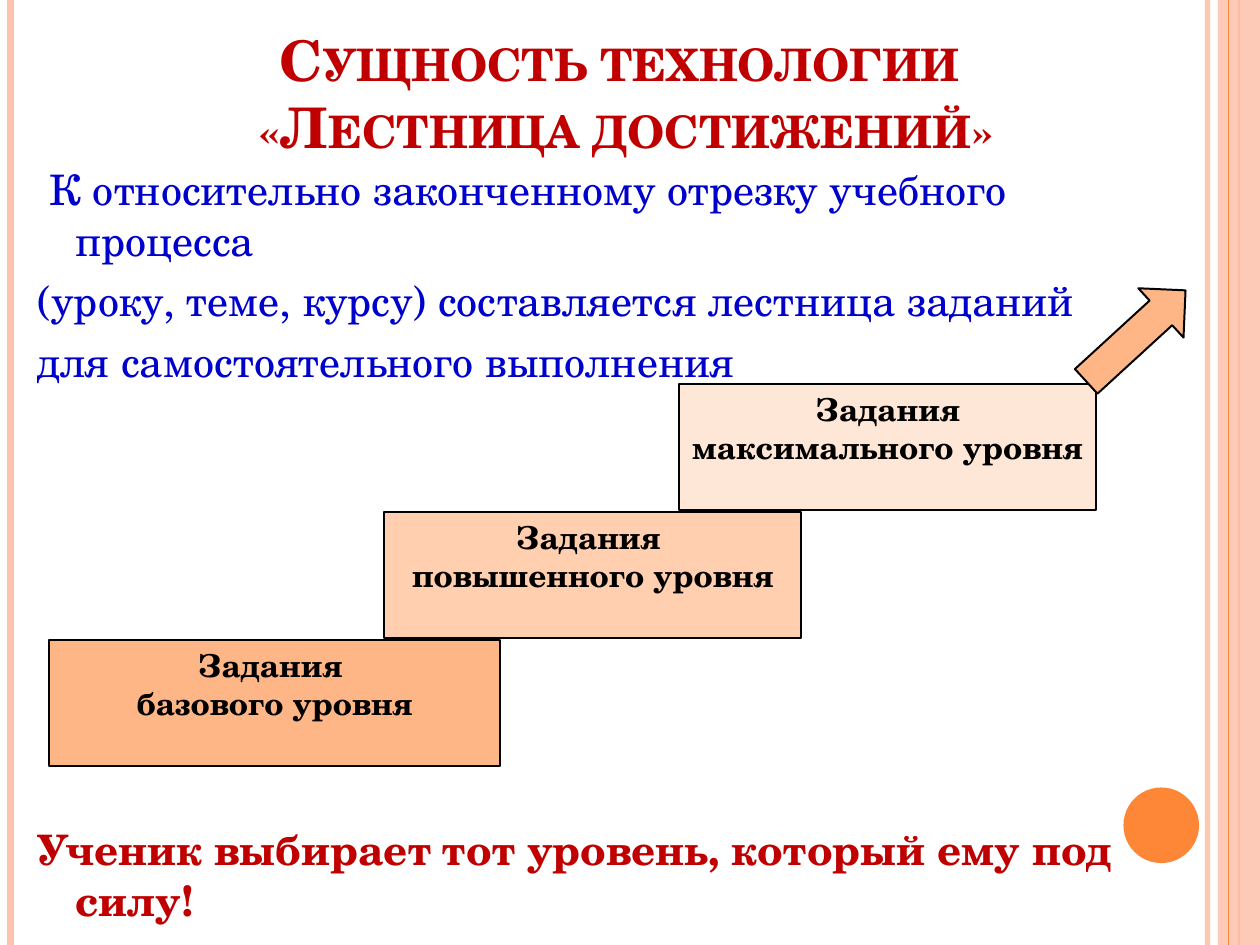
import dataclasses

import pptx
import pptx.dml.color
import pptx.enum.shapes
import pptx.enum.text
import pptx.oxml
import pptx.oxml.ns
import pptx.util

Pt = pptx.util.Pt
SHAPES = pptx.enum.shapes.MSO_SHAPE
ALIGN = pptx.enum.text.PP_ALIGN
ANCHOR = pptx.enum.text.MSO_ANCHOR


@dataclasses.dataclass(frozen=True)
class Theme:
    font: str = "TeX Gyre Schola"
    title_size: float = 32
    body_size: float = 24
    step_size: float = 18
    outline: float = 1.13
    red: str = "C00000"
    blue: str = "0000CC"
    black: str = "000000"
    orange: str = "FE8637"
    pink: str = "FEC3AE"
    steps: tuple = ("FEB687", "FFCFAF", "FFE7D7")


def rgb(value):
    return pptx.dml.color.RGBColor.from_string(value)


def set_opacity(element, percent):
    """Make the solid colour inside the element partly transparent."""
    colour = element.find(".//" + pptx.oxml.ns.qn("a:srgbClr"))
    alpha = pptx.oxml.parse_xml(
        f'<a:alpha {pptx.oxml.ns.nsdecls("a")} val="{percent * 1000}"/>')
    colour.append(alpha)


class SlideBuilder:
    def __init__(self, slide, theme):
        self.slide = slide
        self.theme = theme

    def style(self, para, size, colour, bold=False, align=ALIGN.LEFT):
        para.alignment = align
        font = para.font
        font.name, font.size, font.bold = self.theme.font, Pt(size), bold
        font.color.rgb = rgb(colour)

    def vertical_line(self, x, height, colour, width, opacity=100):
        line = self.slide.shapes.add_connector(
            pptx.enum.shapes.MSO_CONNECTOR.STRAIGHT, Pt(x), Pt(0), Pt(x), Pt(height))
        line.line.color.rgb = rgb(colour)
        line.line.width = Pt(width)
        properties = line._element.spPr
        if opacity < 100:
            set_opacity(properties, opacity)
        properties.append(pptx.oxml.parse_xml(
            f'<a:effectLst {pptx.oxml.ns.nsdecls("a")}/>'))

    def shape(self, kind, bounds, fill, outlined=False, opacity=100):
        shape = self.slide.shapes.add_shape(kind, *map(Pt, bounds))
        shape.shadow.inherit = False
        shape.fill.solid()
        shape.fill.fore_color.rgb = rgb(fill)
        if opacity < 100:
            set_opacity(shape._element.spPr, opacity)
        if outlined:
            shape.line.color.rgb = rgb(self.theme.black)
            shape.line.width = Pt(self.theme.outline)
        else:
            shape.line.fill.background()
        return shape

    def title(self, text, bounds):
        title = self.slide.shapes.title
        title.left, title.top, title.width, title.height = map(Pt, bounds)
        frame = title.text_frame
        frame.auto_size = pptx.enum.text.MSO_AUTO_SIZE.NONE
        frame.vertical_anchor = ANCHOR.BOTTOM
        para = frame.paragraphs[0]
        para.text = text
        self.style(para, self.theme.title_size, self.theme.red, True, ALIGN.CENTER)
        para._p.get_or_add_pPr().get_or_add_defRPr().set("cap", "small")

    def body(self, rows, bounds, hanging):
        """Rows hold text, colour, bold and the space before, in points."""
        frame = self.slide.shapes.add_textbox(*map(Pt, bounds)).text_frame
        frame.word_wrap = True
        for index, (text, colour, bold, space) in enumerate(rows):
            para = frame.add_paragraph() if index else frame.paragraphs[0]
            para.text = text
            self.style(para, self.theme.body_size, colour, bold)
            para.space_before = Pt(space)
            properties = para._p.get_or_add_pPr()
            properties.set("marL", str(Pt(hanging)))
            properties.set("indent", str(-Pt(hanging)))

    def step(self, text, bounds, fill):
        box = self.shape(SHAPES.RECTANGLE, bounds, fill, outlined=True)
        frame = box.text_frame
        frame.word_wrap = True
        frame.vertical_anchor = ANCHOR.TOP
        frame.text = text
        for para in frame.paragraphs:
            self.style(para, self.theme.step_size, self.theme.black, True, ALIGN.CENTER)

    def arrow(self, bounds, rotation, fill):
        arrow = self.shape(SHAPES.RIGHT_ARROW, bounds, fill, outlined=True)
        arrow.rotation = rotation


def main():
    theme = Theme()
    width, height = 720, 540
    deck = pptx.Presentation()
    deck.slide_width, deck.slide_height = Pt(width), Pt(height)
    page = SlideBuilder(deck.slides.add_slide(deck.slide_layouts[5]), theme)

    # Side stripes and corner circle
    page.vertical_line(690, height, theme.pink, 3, opacity=93)
    page.vertical_line(6, height, theme.pink, 4.5)
    page.vertical_line(708, height, theme.orange, 1.5)
    page.shape(SHAPES.RECTANGLE, (696, 0, 24, height), theme.pink, opacity=87)
    page.vertical_line(702, height, theme.orange, 0.75)
    page.shape(SHAPES.OVAL, (642, 450, 43.2, 43.2), theme.orange)

    # Title and body text, with room for the staircase before the last line
    page.title("Сущность технологии \v«Лестница достижений»", (33.8, 16.6, 648, 78.5))
    page.body([
        (" К относительно законченному отрезку учебного процесса", theme.blue, False, 6),
        ("(уроку, теме, курсу) составляется лестница заданий", theme.blue, False, 6),
        ("для самостоятельного выполнения", theme.blue, False, 6),
        ("Ученик выбирает тот уровень, который ему под силу!", theme.red, True, 250),
    ], (14.4, 90, 666.7, 434.9), hanging=21.6)

    # Staircase of tasks, from the bottom step up
    bottom_top, rise, step_height = 365.8, 73.1, 72
    steps = [
        ("Задания \nбазового уровня", 28.1, 257.8),
        ("Задания \nповышенного уровня", 219.6, 238.3),
        ("Задания максимального уровня", 388.1, 238.3),
    ]
    for level, (text, left, step_width) in enumerate(steps):
        top = bottom_top - level * rise
        page.step(text, (left, top, step_width, step_height), theme.steps[level])
    page.arrow((610.6, 172.8, 77, 38.2), 317.5, theme.steps[0])

    deck.save("out.pptx")


if __name__ == "__main__":
    main()
